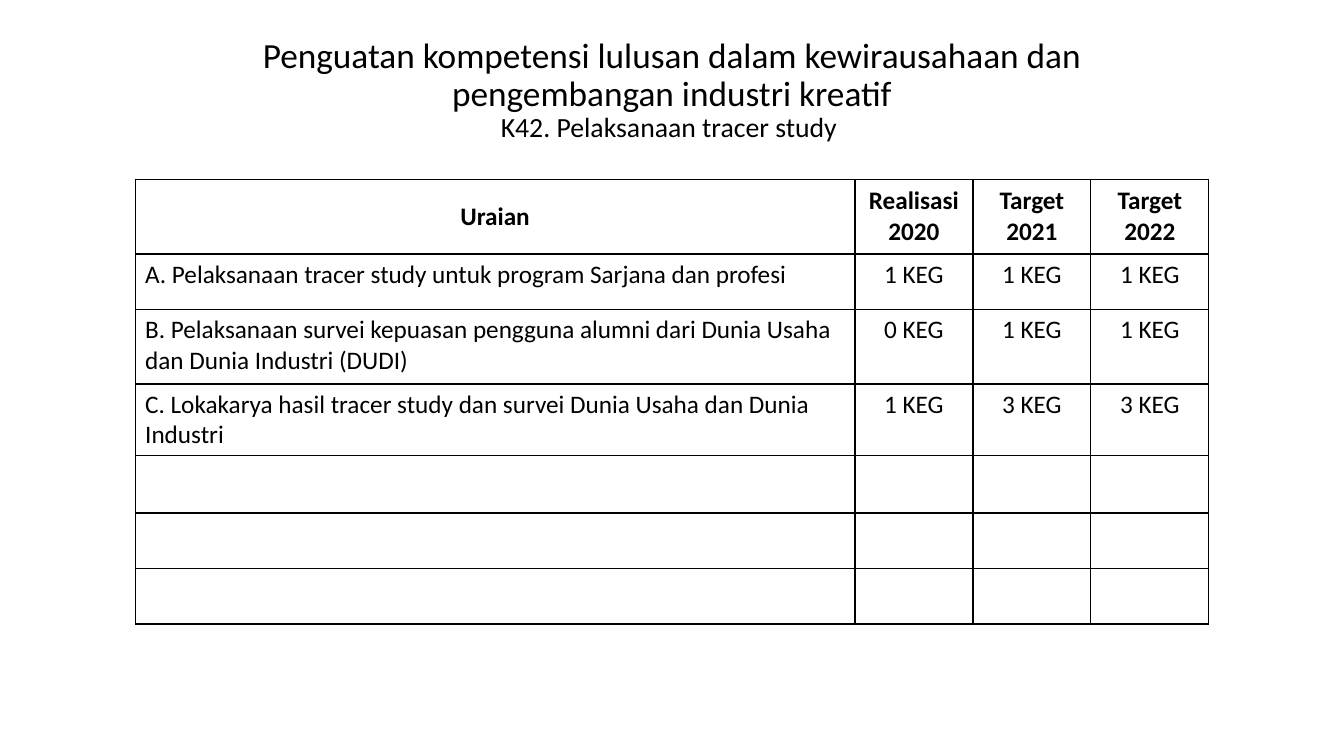
"""Builds a slide with the tracer study targets in a table."""
import pptx
import pptx.dml.color
import pptx.enum.text
import pptx.oxml
import pptx.oxml.ns
import pptx.util
from dataclasses import dataclass

Inches, Pt = pptx.util.Inches, pptx.util.Pt
ALIGN = pptx.enum.text.PP_ALIGN
ANCHOR = pptx.enum.text.MSO_ANCHOR


@dataclass(frozen=True)
class Theme:
    typeface: str = "Calibri"
    ink: str = "000000"
    title_size: float = 25.2
    subtitle_size: float = 19.8
    table_size: float = 18
    border: float = 1


theme = Theme()


def format_font(font, size, bold=False):
    values = {"name": theme.typeface, "size": Pt(size), "bold": bold}
    for name, value in values.items():
        setattr(font, name, value)
    font.color.rgb = pptx.dml.color.RGBColor.from_string(theme.ink)


def add_borders(cell):
    properties = cell._tc.get_or_add_tcPr()
    for position, side in enumerate(("lnL", "lnR", "lnT", "lnB")):
        properties.insert(position, pptx.oxml.parse_xml(
            f'<a:{side} {pptx.oxml.ns.nsdecls("a")} w="{Pt(theme.border)}">'
            f'<a:solidFill><a:srgbClr val="{theme.ink}"/></a:solidFill></a:{side}>'))


presentation = pptx.Presentation()
presentation.slide_width, presentation.slide_height = Inches(13.33), Inches(7.5)
slide = presentation.slides.add_slide(presentation.slide_layouts[5])

title = slide.shapes.title
title_box = {"left": 1.38, "top": 0.36, "width": 10.57, "height": 1.08}
for name, value in title_box.items():
    setattr(title, name, Inches(value))
frame_format = {
    "word_wrap": True,
    "auto_size": pptx.enum.text.MSO_AUTO_SIZE.NONE,
    "vertical_anchor": ANCHOR.MIDDLE,
    "margin_left": Inches(0.8),
    "margin_right": Inches(0.8),
}
for name, value in frame_format.items():
    setattr(title.text_frame, name, value)
paragraph = title.text_frame.paragraphs[0]
paragraph.alignment = ALIGN.CENTER
paragraph.line_spacing = 0.9
heading = paragraph.add_run()
heading.text = "Penguatan kompetensi lulusan dalam kewirausahaan dan pengembangan industri kreatif"
format_font(heading.font, theme.title_size)
paragraph.add_line_break()
subheading = paragraph.add_run()
subheading.text = "K42. Pelaksanaan tracer study "
format_font(subheading.font, theme.subtitle_size)

column_widths = [7.14] + [1.17] * 3
row_heights = [0.74, 0.55, 0.74, 0.55, 0.57, 0.55, 0.55]
rows = [
    ("Uraian", "Realisasi\n2020", "Target\n2021", "Target\n2022"),
    ("A. Pelaksanaan tracer study untuk program Sarjana dan profesi",
     "1 KEG", "1 KEG", "1 KEG"),
    ("B. Pelaksanaan survei kepuasan pengguna alumni dari Dunia Usaha dan Dunia Industri (DUDI)",
     "0 KEG", "1 KEG", "1 KEG"),
    ("C. Lokakarya hasil tracer study dan survei Dunia Usaha dan Dunia Industri",
     "1 KEG", "3 KEG", "3 KEG"),
]
rows += [("",) * len(column_widths)] * (len(row_heights) - len(rows))

table = slide.shapes.add_table(
    len(row_heights), len(column_widths), Inches(1.34), Inches(1.78),
    Inches(sum(column_widths)), Inches(sum(row_heights))).table
table.horz_banding = False
for column, width in zip(table.columns, column_widths):
    column.width = Inches(width)
for row, height in zip(table.rows, row_heights):
    row.height = Inches(height)

for row_index, texts in enumerate(rows):
    is_header = row_index == 0
    for column_index, text in enumerate(texts):
        cell = table.cell(row_index, column_index)
        cell.text = text
        cell.vertical_anchor = ANCHOR.MIDDLE if is_header else ANCHOR.TOP
        cell.fill.background()
        add_borders(cell)
        for paragraph in cell.text_frame.paragraphs:
            centred = is_header or column_index > 0
            paragraph.alignment = ALIGN.CENTER if centred else ALIGN.LEFT
            for run in paragraph.runs:
                format_font(run.font, theme.table_size, bold=is_header)

presentation.save("out.pptx")
